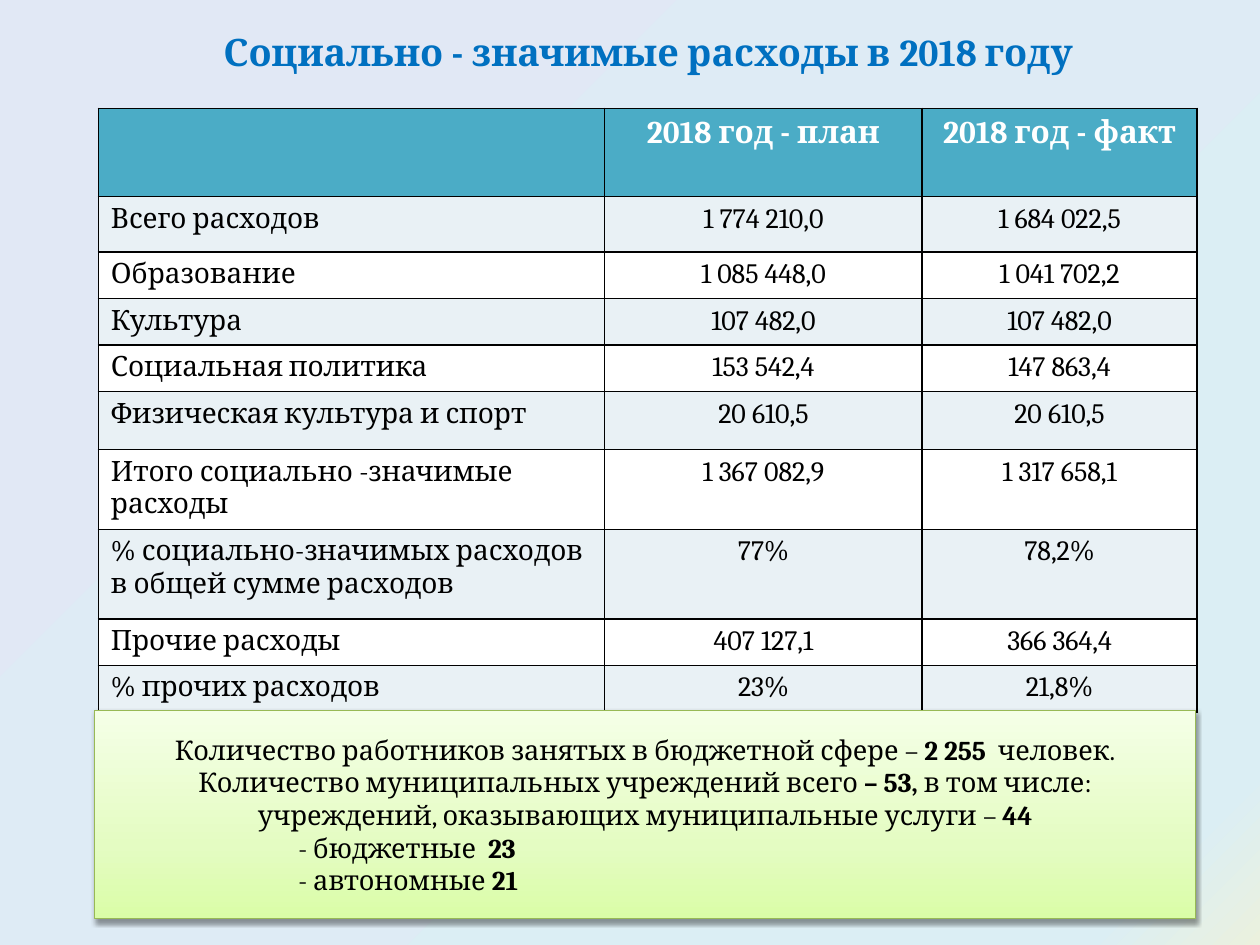
from lxml.etree import SubElement
from copy import deepcopy
from pptx import Presentation
from pptx.dml.color import RGBColor
from pptx.enum.shapes import MSO_SHAPE as Form
from pptx.enum.text import MSO_ANCHOR as Anchor, PP_ALIGN as Align
from pptx.oxml.ns import qn
from pptx.util import Inches, Pt

BLACK, WHITE, BLUE, TEAL, PALE = "000000", "FFFFFF", "0070C0", "4BACC6", "E9F1F5"


def tint(code):
    return RGBColor.from_string(code)


def write(para, text, size=16, color=BLACK, bold=False, align=Align.LEFT, indent=0):
    para.alignment = align
    if indent:
        para._p.get_or_add_pPr().set("marL", str(Inches(indent)))
    for i, part in enumerate(text.split("*")):
        if part:
            run = para.add_run()
            run.text = part
            run.font.name = "Cambria"
            run.font.size = Pt(size)
            run.font.bold = bold or i % 2 == 1
            run.font.color.rgb = tint(color)


def blend(fill, root, stops, angle):
    fill.gradient()
    fill.gradient_angle = 360 - angle
    rack = next(root.iter(qn("a:gsLst")))
    rack.append(deepcopy(rack[-1]))
    for stop, (spot, code) in zip(fill.gradient_stops, stops):
        stop.position = spot / 100
        stop.color.rgb = tint(code)


class Deck:
    def __init__(self):
        self.show = Presentation()
        self.show.slide_width, self.show.slide_height = Inches(10), Inches(7.5)
        self.slide = self.show.slides.add_slide(self.show.slide_layouts[6])

    def back(self, stops, angle):
        blend(self.slide.background.fill, self.slide.element, stops, angle)

    def title(self, text, *area):
        frame = self.slide.shapes.add_textbox(*map(Inches, area)).text_frame
        frame.word_wrap = True
        frame.vertical_anchor = Anchor.MIDDLE
        write(frame.paragraphs[0], text, size=21.6, color=BLUE, bold=True,
              align=Align.CENTER)

    def edge(self, cell):
        props = cell._tc.get_or_add_tcPr()
        for i, side in enumerate(("lnL", "lnR", "lnT", "lnB")):
            line = props.makeelement(qn("a:" + side), {"w": str(Pt(1))})
            paint = SubElement(line, qn("a:solidFill"))
            SubElement(paint, qn("a:srgbClr"), val=BLACK)
            props.insert(i, line)

    def table(self, rows, left, top, widths, heights):
        area = map(Inches, (left, top, sum(widths), sum(heights)))
        grid = self.slide.shapes.add_table(len(rows), len(widths), *area).table
        for col, width in zip(grid.columns, widths):
            col.width = Inches(width)
        for r, (row, height) in enumerate(zip(rows, heights)):
            grid.rows[r].height = Inches(height)
            for c, text in enumerate(row):
                cell = grid.cell(r, c)
                cell.fill.solid()
                cell.fill.fore_color.rgb = tint((PALE if r % 2 else WHITE) if r else TEAL)
                self.edge(cell)
                write(cell.text_frame.paragraphs[0], text, size=16 if r else 18,
                      color=BLACK if r else WHITE, bold=r == 0,
                      align=Align.CENTER if c else Align.LEFT)

    def panel(self, lines, items, stops, *area):
        box = self.slide.shapes.add_shape(Form.RECTANGLE, *map(Inches, area))
        blend(box.fill, box.element.spPr, stops, 270)
        box.line.color.rgb = tint("98B955")
        box.line.width = Pt(0.75)
        box.shadow.inherit = False
        glow = SubElement(box.element.spPr.find(qn("a:effectLst")), qn("a:outerShdw"),
                          blurRad=str(Pt(3.1)), dist=str(Pt(1.6)), dir="5400000",
                          rotWithShape="0")
        shade = SubElement(glow, qn("a:srgbClr"), val=BLACK)
        SubElement(shade, qn("a:alpha"), val="38000")
        frame = box.text_frame
        frame.word_wrap = True
        frame.vertical_anchor = Anchor.MIDDLE
        for i, text in enumerate(lines + items):
            para = frame.add_paragraph() if i else frame.paragraphs[0]
            look = {"indent": 1.52} if text in items else {"align": Align.CENTER}
            write(para, text, size=15.5, **look)

    def save(self):
        self.show.save("out.pptx")


def main():
    deck = Deck()
    deck.back([(0, "EBF1DE"), (8, "DBEEF4"), (100, "E1E8F5")], 225)
    deck.title("Социально - значимые расходы в 2018 году", 0.78, 0.13, 8.73, 0.55)
    rows = [
        ("", "2018 год - план", "2018 год - факт"),
        ("Всего расходов", "1 774 210,0", "1 684 022,5"),
        ("Образование", "1 085 448,0", "1 041 702,2"),
        ("Культура", "107 482,0", "107 482,0"),
        ("Социальная политика", "153 542,4", "147 863,4"),
        ("Физическая культура и спорт", "20 610,5", "20 610,5"),
        ("Итого социально -значимые расходы", "1 367 082,9", "1 317 658,1"),
        ("% социально-значимых расходов в общей сумме расходов", "77%", "78,2%"),
        ("Прочие расходы", "407 127,1", "366 364,4"),
        ("% прочих расходов", "23%", "21,8%"),
    ]
    heights = [0.7, 0.44, 0.37, 0.37, 0.37, 0.46, 0.61, 0.71, 0.37, 0.37]
    deck.table(rows, 0.78, 0.86, [4.02, 2.52, 2.18], heights)
    lines = [
        "Количество работников занятых в бюджетной сфере – *2 255 * человек.",
        "Количество муниципальных учреждений всего *– 53,* в том числе:",
        "учреждений, оказывающих муниципальные услуги – *44*",
    ]
    items = ["- бюджетные  *23*", "- автономные *21*"]
    deck.panel(lines, items, [(0, "DAFDA7"), (35, "E4FCC2"), (100, "F5FFE7")],
               0.75, 5.64, 8.74, 1.65)
    deck.save()


if __name__ == "__main__":
    main()
